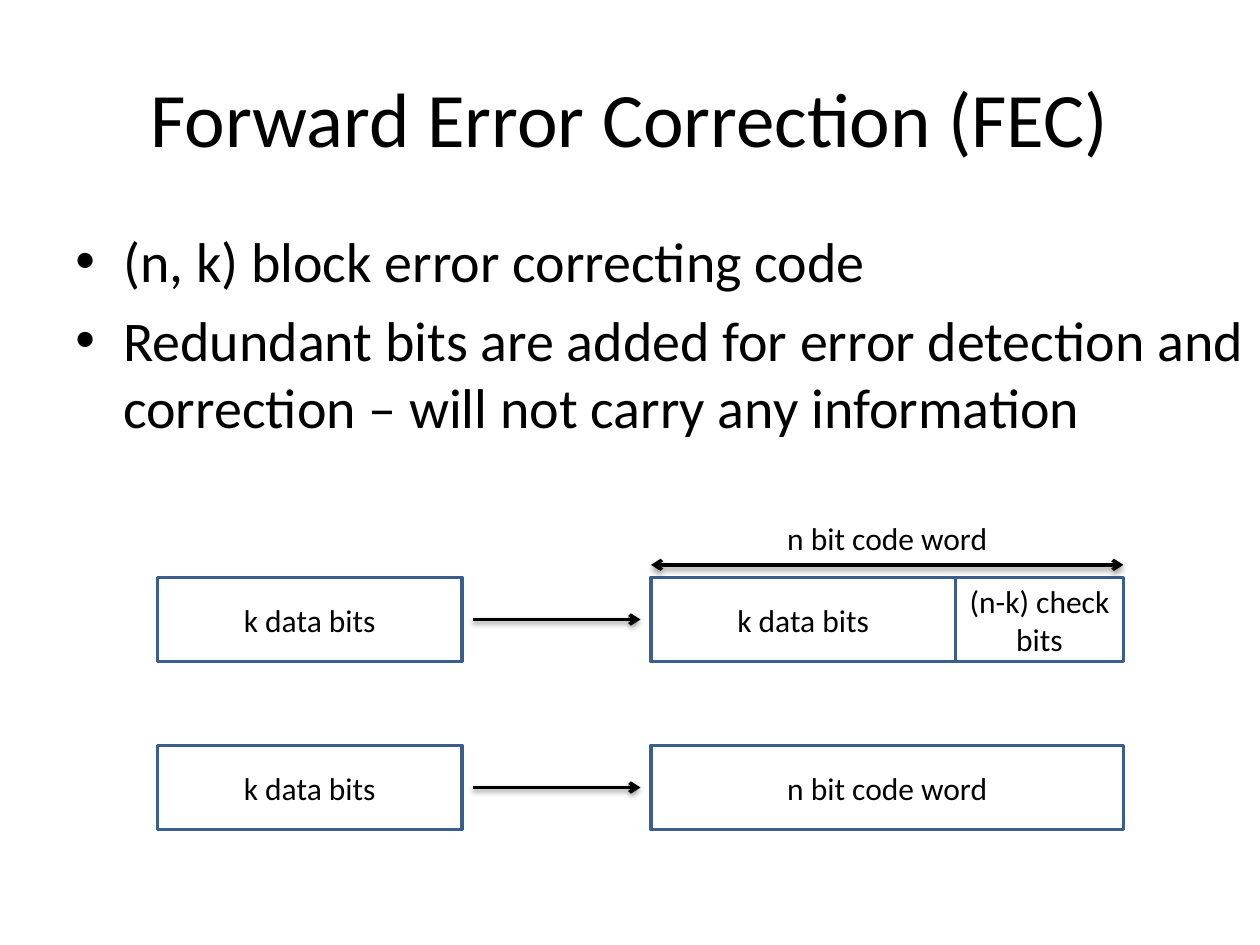
import pptx
import pptx.dml.color
import pptx.enum.shapes
import pptx.enum.text
import pptx.oxml
import pptx.oxml.ns
import pptx.util

BLACK = pptx.dml.color.RGBColor(0x00, 0x00, 0x00)
BOX_BLUE = pptx.dml.color.RGBColor(0x3A, 0x5F, 0x8C)
FONT = "Calibri"
LINE_WIDTH = pptx.util.Pt(2)

# Grid of twelfths of an inch: columns and rows of the diagram
CELL = pptx.util.Inches(1 / 12)
DATA_COL, CODE_COL, CHECK_COL = 15, 62, 91
DATA_COLS, CHECK_COLS = 29, 16
CODE_COLS = DATA_COLS + CHECK_COLS
SPLIT_ROW, WHOLE_ROW = 55, 71
BOX_ROWS = 8
ARROW_GAP = 1


def grid(*units):
    return [round(unit * CELL) for unit in units]


def write(frame, lines, size, align, anchor):
    frame.word_wrap = True
    frame.vertical_anchor = anchor
    frame.text = "\n".join(lines)
    for paragraph in frame.paragraphs:
        paragraph.alignment = align
        for run in paragraph.runs:
            run.font.name = FONT
            run.font.size = pptx.util.Pt(size)
            run.font.color.rgb = BLACK


def write_centred(frame, line, size):
    write(frame, [line], size, pptx.enum.text.PP_ALIGN.CENTER,
          pptx.enum.text.MSO_ANCHOR.MIDDLE)


def add_label(slide, area, line, size):
    label = slide.shapes.add_textbox(*area)
    write_centred(label.text_frame, line, size)


def add_bullets(slide, area, lines, size):
    body = slide.shapes.add_textbox(*area)
    write(body.text_frame, lines, size, pptx.enum.text.PP_ALIGN.LEFT,
          pptx.enum.text.MSO_ANCHOR.TOP)
    indent = pptx.util.Inches(0.38)
    for paragraph in body.text_frame.paragraphs:
        paragraph.space_before = pptx.util.Pt(size * 0.2)
        properties = paragraph._p.get_or_add_pPr()
        properties.set("marL", str(indent))
        properties.set("indent", str(-indent))
        for tag, name, value in (("a:buFont", "typeface", "Arial"),
                                 ("a:buChar", "char", "•")):
            bullet = pptx.oxml.parse_xml(
                f'<{tag} {pptx.oxml.ns.nsdecls("a")} {name}="{value}"/>')
            properties.append(bullet)


def add_box(slide, column, row, columns, line):
    box = slide.shapes.add_shape(pptx.enum.shapes.MSO_SHAPE.RECTANGLE,
                                 *grid(column, row, columns, BOX_ROWS))
    box.shadow.inherit = False
    box.fill.background()
    box.line.color.rgb = BOX_BLUE
    box.line.width = LINE_WIDTH
    write_centred(box.text_frame, line, 18)


def add_arrow(slide, start, end, row, both_ends=False):
    arrow = slide.shapes.add_connector(
        pptx.enum.shapes.MSO_CONNECTOR.STRAIGHT, *grid(start, row, end, row))
    arrow.line.color.rgb = BLACK
    arrow.line.width = LINE_WIDTH
    namespace = pptx.oxml.ns.nsdecls("a")
    for tag in ("headEnd", "tailEnd") if both_ends else ("tailEnd",):
        arrow.line._get_or_add_ln().append(
            pptx.oxml.parse_xml(f'<a:{tag} {namespace} type="arrow"/>'))
    # Soft shadow straight below the line
    blur, distance = pptx.util.Pt(3.1), pptx.util.Pt(1.6)
    arrow._element.spPr.append(pptx.oxml.parse_xml(
        f'<a:effectLst {namespace}><a:outerShdw blurRad="{blur}" '
        f'dist="{distance}" dir="5400000" rotWithShape="0">'
        '<a:srgbClr val="000000"><a:alpha val="38000"/></a:srgbClr>'
        '</a:outerShdw></a:effectLst>'))


def main():
    deck = pptx.Presentation()
    deck.slide_width = pptx.util.Inches(10)
    deck.slide_height = pptx.util.Inches(7.5)
    slide = deck.slides.add_slide(deck.slide_layouts[6])
    width, height = deck.slide_width, deck.slide_height

    # Title and bullets
    title_area = [round(share) for share in
                  (width * 0.05, height * 0.04, width * 0.9, height / 6)]
    add_label(slide, title_area, "Forward Error Correction (FEC)", 44)
    body_area = [round(share) for share in
                 (width * 0.05, height * 7 / 30, width * 0.95, height * 0.7)]
    add_bullets(slide, body_area, [
        "(n, k) block error correcting code",
        "Redundant bits are added for error detection and correction"
        " – will not carry any information",
    ], 32)

    # Data bits and the code words they become
    for column, row, columns, line in (
            (DATA_COL, SPLIT_ROW, DATA_COLS, "k data bits"),
            (CHECK_COL, SPLIT_ROW, CHECK_COLS, "(n-k) check bits"),
            (CODE_COL, SPLIT_ROW, DATA_COLS, "k data bits"),
            (DATA_COL, WHOLE_ROW, DATA_COLS, "k data bits"),
            (CODE_COL, WHOLE_ROW, CODE_COLS, "n bit code word")):
        add_box(slide, column, row, columns, line)

    # Length of the code word
    add_arrow(slide, CODE_COL, CODE_COL + CODE_COLS, SPLIT_ROW - 1.2, True)
    add_label(slide, grid(CODE_COL, SPLIT_ROW - 7.8, CODE_COLS, BOX_ROWS),
              "n bit code word", 18)

    # Encoding steps
    for row in (SPLIT_ROW, WHOLE_ROW):
        add_arrow(slide, DATA_COL + DATA_COLS + ARROW_GAP,
                  CODE_COL - ARROW_GAP, row + BOX_ROWS / 2)

    deck.save("out.pptx")


if __name__ == "__main__":
    main()
